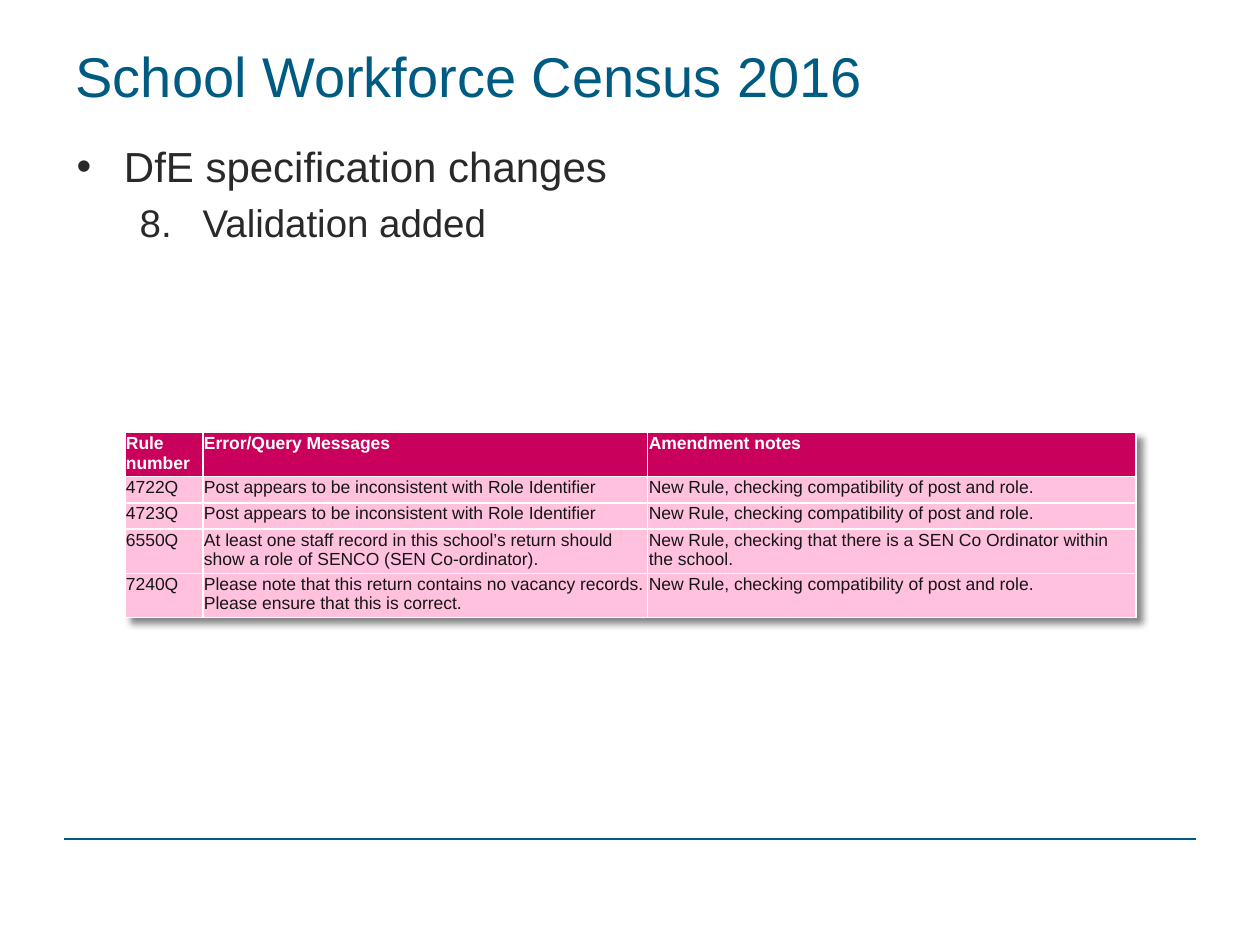
from pptx import Presentation
from pptx.dml.color import RGBColor
from pptx.enum.shapes import MSO_CONNECTOR
from pptx.enum.text import MSO_ANCHOR, PP_ALIGN
from pptx.oxml import parse_xml
from pptx.oxml.ns import nsdecls
from pptx.util import Pt

TEAL = RGBColor(0x00, 0x5B, 0x82)
DARK = RGBColor(0x29, 0x29, 0x2A)
INK = RGBColor(0x16, 0x16, 0x16)
WHITE = RGBColor(0xFF, 0xFF, 0xFF)
PINK = RGBColor(0xCA, 0x00, 0x5D)
PALE = RGBColor(0xFF, 0xC1, 0xDE)


def add_run(para, text, size, color, bold=False):
    run = para.add_run()
    run.text = text
    font = run.font
    font.name, font.size, font.bold = "Arial", Pt(size), bold
    font.color.rgb = color


def add_xml(parent, tag, attrs="", inner=""):
    parent.append(parse_xml(f"<a:{tag} {nsdecls('a')} {attrs}>{inner}</a:{tag}>"))


deck = Presentation()
deck.slide_width, deck.slide_height = Pt(720), Pt(540)
slide = deck.slides.add_slide(deck.slide_layouts[5])

# Footer rule
rule = slide.shapes.add_connector(
    MSO_CONNECTOR.STRAIGHT, Pt(36.7), Pt(479.5), Pt(683.3), Pt(479.5))
rule.line.color.rgb = TEAL
rule.line.width = Pt(0.75)
add_xml(rule._element.spPr, "effectLst")

# Title
title = slide.shapes.title
title.left, title.top, title.width, title.height = Pt(36), Pt(-2), Pt(648), Pt(90)
title.text_frame.vertical_anchor = MSO_ANCHOR.MIDDLE
para = title.text_frame.paragraphs[0]
para.alignment = PP_ALIGN.LEFT
add_run(para, "School Workforce Census 2016", 32, TEAL)

# Bullet and numbered point
body = slide.shapes.add_textbox(Pt(36.7), Pt(77), Pt(646.6), Pt(67.7))
frame = body.text_frame
frame.word_wrap = True
points = [
    ("DfE specification changes", 24, 0, 27, 27, "buChar", 'char="•"'),
    ("Validation added", 22, 1, 72, 36, "buAutoNum", 'type="arabicPeriod" startAt="8"'),
]
for i, (text, size, level, left, hang, tag, attrs) in enumerate(points):
    para = frame.add_paragraph() if i else frame.paragraphs[0]
    para.level = level
    props = para._p.get_or_add_pPr()
    props.set("marL", str(Pt(left)))
    props.set("indent", str(-Pt(hang)))
    add_xml(props, "buFont", 'typeface="Arial"')
    add_xml(props, tag, attrs)
    if i:
        para.space_before = Pt(4.4)
    add_run(para, text, size, DARK)

# Table of validation rules
match = "Post appears to be inconsistent with Role Identifier"
check = "New Rule, checking compatibility of post and role."
rows = [
    ("Rule number", "Error/Query Messages", "Amendment notes"),
    ("4722Q", match, check),
    ("4723Q", match, check),
    ("6550Q",
     "At least one staff record in this school’s return should show a role of "
     "SENCO (SEN Co-ordinator).",
     "New Rule, checking that there is a SEN Co Ordinator within the school."),
    ("7240Q",
     "Please note that this return contains no vacancy records. "
     "Please ensure that this is correct.",
     check),
]
widths = [44.6, 254.2, 279]
heights = [25.2, 15, 15, 25.2, 25.2]
table = slide.shapes.add_table(
    len(rows), len(widths), Pt(71.3), Pt(247.2), Pt(sum(widths)), Pt(sum(heights))).table
for col, width in zip(table.columns, widths):
    col.width = Pt(width)
for row, height in zip(table.rows, heights):
    row.height = Pt(height)

# Soft shadow under the table
shade = ('<a:outerShdw blurRad="50800" dist="50800" dir="2700000" algn="tl" rotWithShape="0">'
         '<a:srgbClr val="000000"><a:alpha val="45000"/></a:srgbClr></a:outerShdw>')
add_xml(table._tbl.tblPr, "effectLst", inner=shade)
style = table._tbl.tblPr[0]
table._tbl.tblPr.append(style)

# Cell text, borders and fills
edge = f'<a:solidFill><a:srgbClr val="{WHITE}"/></a:solidFill>'
for r, texts in enumerate(rows):
    for c, text in enumerate(texts):
        cell = table.cell(r, c)
        cell.margin_left = cell.margin_right = cell.margin_top = Pt(0.7)
        cell.margin_bottom = Pt(0)
        for side in ("lnL", "lnR", "lnT", "lnB"):
            add_xml(cell._tc.get_or_add_tcPr(), side, f'w="{Pt(1)}"', edge)
        cell.fill.solid()
        cell.fill.fore_color.rgb = PALE if r else PINK
        add_run(cell.text_frame.paragraphs[0], text, 10, INK if r else WHITE, r == 0)

deck.save("out.pptx")
